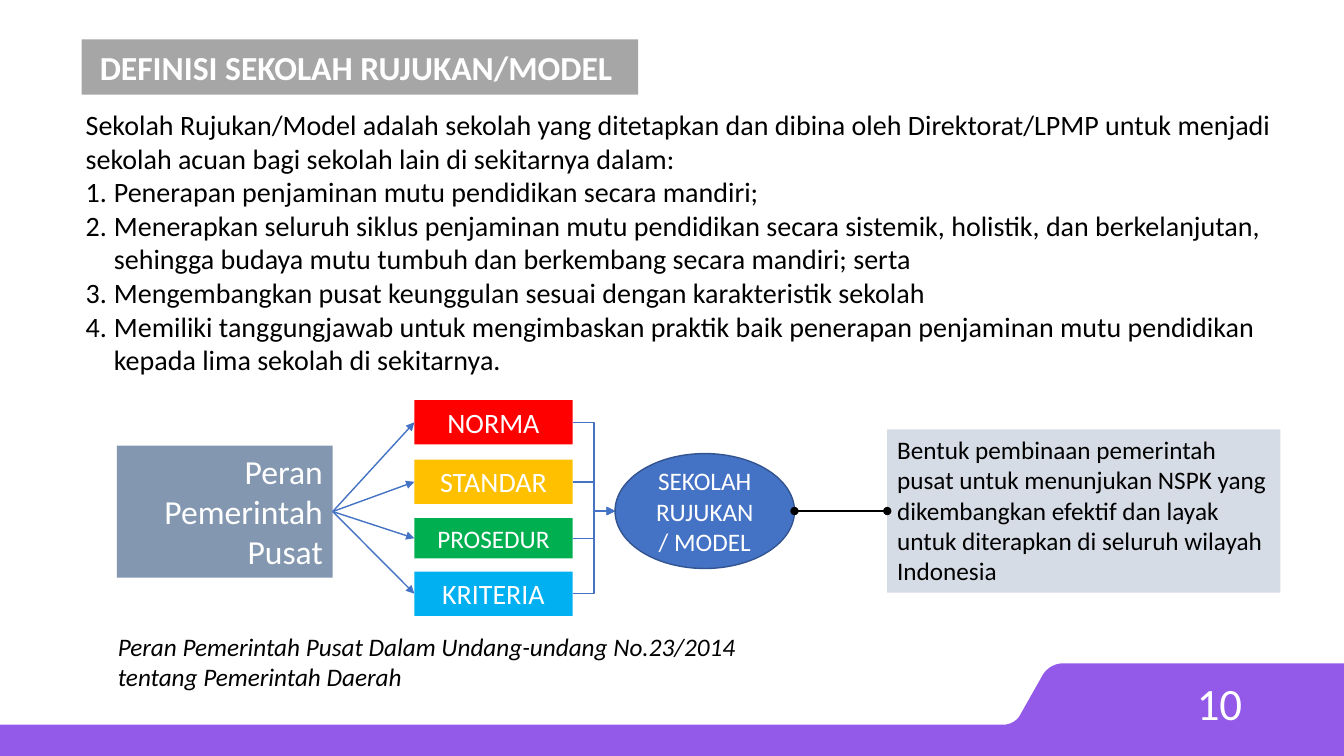
from dataclasses import dataclass

from lxml import etree
from pptx import Presentation
from pptx import util as u
from pptx.dml.color import RGBColor
from pptx.enum import shapes, text
from pptx.oxml import ns

PX = 9144
FONT = "Calibri"
C = {
    "purple": "935AE9", "white": "FFFFFF", "black": "000000", "grey": "A6A6A6",
    "slate": "8497B0", "red": "FF0000", "amber": "FFC000", "green": "00B050",
    "sky": "00B0F0", "blue": "4472C4", "navy": "325491", "pale": "D6DCE5",
}
KIND = shapes.MSO_SHAPE
ALIGN = text.PP_ALIGN
ANCHOR = text.MSO_ANCHOR
FIT = text.MSO_AUTO_SIZE


@dataclass
class Box:
    x: int
    y: int
    w: int
    h: int
    text: str
    size: int
    fill: str | None = None
    color: str = "white"
    align: ALIGN = ALIGN.CENTER
    kind: KIND | None = KIND.RECTANGLE
    line: str | None = None
    grow: bool = True
    italic: bool = False
    bold: bool = False


TITLE = Box(81, 39, 552, 55, "DEFINISI SEKOLAH RUJUKAN/MODEL ", 24, "grey",
            grow=False, bold=True)
DEFINITION = Box(
    62, 105, 1223, 270,
    "Sekolah Rujukan/Model adalah sekolah yang ditetapkan dan dibina oleh Direktorat/LPMP untuk "
    "menjadi sekolah acuan bagi sekolah lain di sekitarnya dalam:\n"
    "Penerapan penjaminan mutu pendidikan secara mandiri;\n"
    "Menerapkan seluruh siklus penjaminan mutu pendidikan secara sistemik, holistik, dan "
    "berkelanjutan, sehingga budaya mutu tumbuh dan berkembang secara mandiri; serta\n"
    "Mengembangkan pusat keunggulan sesuai dengan karakteristik sekolah\n"
    "Memiliki tanggungjawab untuk mengimbaskan praktik baik penerapan penjaminan mutu "
    "pendidikan kepada lima sekolah di sekitarnya.",
    20, "white", "black", ALIGN.LEFT, KIND.ROUND_2_DIAG_RECTANGLE, grow=False)
ROLE = Box(116, 442, 214, 131, "Peran Pemerintah Pusat", 24, "slate", align=ALIGN.RIGHT)
NSPK = [
    Box(411, 397, 157, 44, "NORMA", 20, "red"),
    Box(411, 456, 157, 44, "STANDAR", 20, "amber"),
    Box(411, 514, 157, 40, "PROSEDUR", 18, "green"),
    Box(411, 567, 157, 44, "KRITERIA", 20, "sky"),
]
MODEL = Box(610, 450, 178, 114, "SEKOLAH RUJUKAN/ MODEL", 18, "blue",
            kind=KIND.OVAL, line="navy", grow=False)
COACHING = Box(
    880, 426, 390, 162,
    "Bentuk pembinaan pemerintah pusat untuk menunjukan NSPK yang dikembangkan efektif "
    "dan layak untuk diterapkan di seluruh wilayah Indonesia",
    18, "pale", "black", ALIGN.LEFT)
LAW = Box(107, 621, 655, 71,
          "Peran Pemerintah Pusat Dalam Undang-undang No.23/2014 tentang Pemerintah Daerah",
          18, color="black", align=ALIGN.LEFT, kind=None, italic=True)
PAGE = Box(942, 677, 300, 40, "10", 32, align=ALIGN.RIGHT, kind=None, grow=False)


def rgb(name: str) -> RGBColor:
    return RGBColor.from_string(C[name])


def format_box(sp, box: Box) -> None:
    if box.fill:
        sp.fill.solid()
        sp.fill.fore_color.rgb = rgb(box.fill)
    if box.line:
        sp.line.color.rgb = rgb(box.line)
        sp.line.width = u.Pt(1)
    else:
        sp.line.fill.background()
    tf = sp.text_frame
    tf.text = box.text
    tf.word_wrap = True
    tf.auto_size = FIT.SHAPE_TO_FIT_TEXT if box.grow else FIT.NONE
    tf.vertical_anchor = ANCHOR.TOP if box.grow else ANCHOR.MIDDLE
    for p in tf.paragraphs:
        p.alignment = box.align
        for r in p.runs:
            r.font.name = FONT
            r.font.size = u.Pt(box.size)
            r.font.color.rgb = rgb(box.color)
            r.font.bold = box.bold
            r.font.italic = box.italic


def draw_box(s, box: Box):
    frame = [v * PX for v in (box.x, box.y, box.w, box.h)]
    if box.kind is None:
        sp = s.shapes.add_textbox(*frame)
    else:
        sp = s.shapes.add_shape(box.kind, *frame)
        sp.shadow.inherit = False
    format_box(sp, box)
    return sp


def draw_title(s, box: Box) -> None:
    sp = s.shapes.title
    sp.left, sp.top, sp.width, sp.height = (v * PX for v in (box.x, box.y, box.w, box.h))
    geom = etree.SubElement(sp.element.spPr, ns.qn("a:prstGeom"), prst="snip2DiagRect")
    etree.SubElement(geom, ns.qn("a:avLst"))
    format_box(sp, box)


def number_items(sp, indent: int) -> None:
    for p in sp.text_frame.paragraphs[1:]:
        ppr = p._p.get_or_add_pPr()
        ppr.set("marL", str(indent * PX))
        ppr.set("indent", str(-indent * PX))
        etree.SubElement(ppr, ns.qn("a:buFont"), typeface="+mj-lt")
        etree.SubElement(ppr, ns.qn("a:buAutoNum"), type="arabicPeriod")


def draw_link(s, kind, begin: tuple, end: tuple, color: str, **ends: str):
    c = s.shapes.add_connector(kind, *(round(v * PX) for v in begin + end))
    c.line.color.rgb = rgb(color)
    c.line.width = u.Pt(1)
    ln = c.line._get_or_add_ln()
    for tag, shape in ends.items():
        etree.SubElement(ln, ns.qn(f"a:{tag}"), type=shape)
    etree.SubElement(c._element.spPr, ns.qn("a:effectLst"))
    return c


def left_of(box: Box) -> tuple:
    return box.x, box.y + box.h / 2


def right_of(box: Box) -> tuple:
    return box.x + box.w, box.y + box.h / 2


def bezier(*pts: tuple, steps: int = 12) -> list:
    weights = (1, 3, 3, 1)
    return [
        tuple(sum(k * (1 - t) ** (3 - i) * t ** i * pt[axis]
                  for i, (k, pt) in enumerate(zip(weights, pts))) for axis in (0, 1))
        for t in (n / steps for n in range(steps + 1))
    ]


def draw_footer(s) -> None:
    outline = (bezier((1055, 658), (1046, 658), (1038, 663), (1034, 670))
               + bezier((1012, 709), (1009, 715), (1002, 719), (995, 719))
               + [(0, 719), (0, 750), (1333, 750), (1333, 658)])
    start, *rest = [(round(x * PX), round(y * PX)) for x, y in outline]
    fb = s.shapes.build_freeform(*start)
    fb.add_line_segments(rest, close=True)
    sp = fb.convert_to_shape()
    sp.shadow.inherit = False
    sp.fill.solid()
    sp.fill.fore_color.rgb = rgb("purple")
    sp.line.fill.background()


def main() -> None:
    prs = Presentation()
    prs.slide_width, prs.slide_height = 1333 * PX, 750 * PX
    s = prs.slides.add_slide(prs.slide_layouts[5])
    draw_footer(s)
    number_items(draw_box(s, DEFINITION), 28)
    draw_title(s, TITLE)
    role = draw_box(s, ROLE)
    straight, elbow = shapes.MSO_CONNECTOR.STRAIGHT, shapes.MSO_CONNECTOR.ELBOW
    for box in NSPK:
        sp = draw_box(s, box)
        c = draw_link(s, straight, right_of(ROLE), left_of(box), "blue", tailEnd="triangle")
        c.begin_connect(role, 3)
        c.end_connect(sp, 1)
        draw_link(s, elbow, right_of(box), left_of(MODEL), "blue", tailEnd="triangle")
    for box in (MODEL, COACHING, LAW, PAGE):
        draw_box(s, box)
    draw_link(s, straight, right_of(MODEL), left_of(COACHING), "black",
              headEnd="oval", tailEnd="oval")
    prs.save("out.pptx")


if __name__ == "__main__":
    main()
